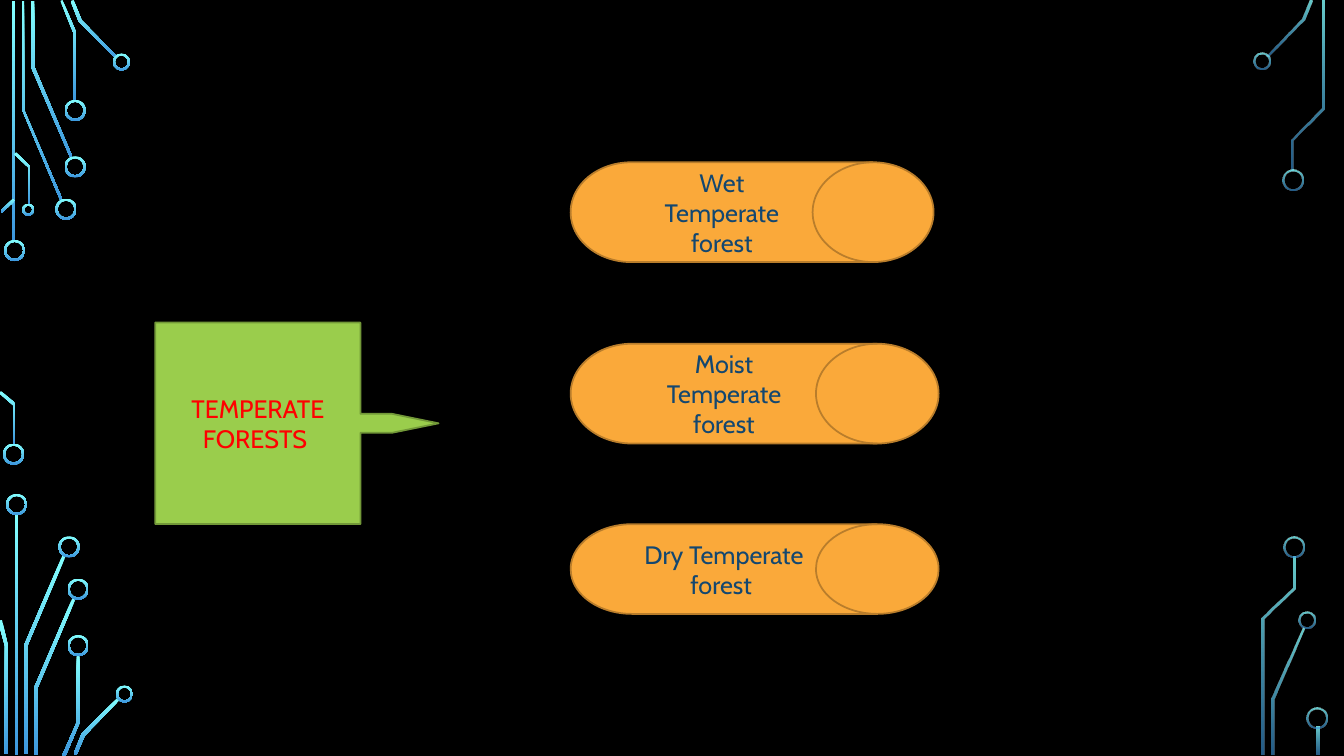
"""Build a slide that sorts temperate forests into three kinds."""
from lxml import etree
from pptx import Presentation
from pptx.dml.color import RGBColor
from pptx.enum.shapes import MSO_SHAPE
from pptx.enum.text import MSO_ANCHOR, PP_ALIGN
from pptx.oxml.ns import qn
from pptx.util import Inches, Pt

RECT = MSO_SHAPE.RECTANGLE
RING = MSO_SHAPE.DONUT
DRUM = MSO_SHAPE.FLOWCHART_DIRECT_ACCESS_STORAGE
CALLOUT = MSO_SHAPE.RIGHT_ARROW_CALLOUT
CENTER = PP_ALIGN.CENTER
MIDDLE = MSO_ANCHOR.MIDDLE


def glow(shape, right):
    """Give a circuit part its gradient, see-through on the right side."""
    shape.shadow.inherit = False
    shape.line.fill.background()
    shape.fill.gradient()
    shape.fill.gradient_angle = 270
    parts = zip(shape.fill.gradient_stops, ("82FFFF", "3D97DE"), (0, 1))
    for stop, color, place in parts:
        stop.color.rgb = RGBColor.from_string(color)
        stop.position = place
    if right:
        tones = shape._element.spPr.iter(qn("a:srgbClr"))
        for tone, alpha in zip(list(tones), ("80000", "60000")):
            etree.SubElement(tone, qn("a:alpha")).set("val", alpha)


def label(shape, box_fill, edge, text, color):
    """Paint a box and write its centred text."""
    shape.shadow.inherit = False
    shape.fill.solid()
    shape.fill.fore_color.rgb = RGBColor.from_string(box_fill)
    shape.line.color.rgb = RGBColor.from_string(edge)
    shape.line.width = Pt(1.25)
    frame = shape.text_frame
    frame.word_wrap = True
    frame.vertical_anchor = MIDDLE
    para = frame.paragraphs[0]
    para.text = text
    para.alignment = CENTER
    para.font.size = Pt(18)
    para.font.name = "Cabin"
    para.font.color.rgb = RGBColor.from_string(color)


deck = Presentation()
deck.slide_width = Inches(13.33)
deck.slide_height = Inches(7.5)
slide = deck.slides.add_slide(deck.slide_layouts[6])
slide.background.fill.solid()
slide.background.fill.fore_color.rgb = RGBColor.from_string("000000")
shapes = slide.shapes

bars = [(0.12, 0.01, 2.39), (0.15, 5.1, 2.39), (13.06, 7.21, 0.28)]
for left, top, high in bars:
    bar = shapes.add_shape(
        RECT, Inches(left), Inches(top), Inches(0.03), Inches(high))
    glow(bar, left > 6)

traces = [
    [(0.6, 1.99), (0.22, 1.09), (0.22, 0.01), (0.24, 0.01), (0.24, 1.09),
     (0.62, 1.98)],
    [(0.7, 1.57), (0.31, 0.67), (0.31, 0.01), (0.34, 0.01), (0.34, 0.66),
     (0.72, 1.56)],
    [(0.76, 1), (0.73, 1), (0.73, 0.33), (0.6, 0.01), (0.62, 0),
     (0.76, 0.33)],
    [(1.15, 0.58), (0.78, 0.21), (0.7, 0.01), (0.73, 0), (0.81, 0.2),
     (1.16, 0.56)],
    [(0.02, 2.11), (0.01, 2.09), (0.13, 1.97), (0.15, 1.99)],
    [(0.15, 4.41), (0.13, 4.41), (0.13, 4.02), (-0.01, 3.9), (0.01, 3.88),
     (0.15, 4)],
    [(0.3, 2.03), (0.28, 2.03), (0.28, 1.66), (0.14, 1.53), (0.16, 1.51),
     (0.3, 1.65)],
    [(0.27, 7.48), (0.24, 7.48), (0.24, 6.4), (0.62, 5.51), (0.65, 5.52),
     (0.27, 6.41)],
    [(0.08, 7.48), (0.05, 7.48), (0.05, 6.41), (-0.02, 6.16), (0.02, 6.15),
     (0.08, 6.41)],
    [(0.37, 7.49), (0.34, 7.49), (0.34, 6.82), (0.72, 5.93), (0.75, 5.94),
     (0.37, 6.83)],
    [(0.65, 7.5), (0.62, 7.49), (0.76, 7.17), (0.76, 6.5), (0.79, 6.5),
     (0.79, 7.17)],
    [(0.76, 7.49), (0.73, 7.48), (0.81, 7.28), (1.17, 6.92), (1.19, 6.94),
     (0.84, 7.3)],
    [(12.58, 0.56), (12.56, 0.55), (12.91, 0.19), (12.99, 0), (13.02, 0.01),
     (12.94, 0.2)],
    [(12.64, 7.49), (12.61, 7.49), (12.61, 6.93), (12.92, 6.23),
     (12.94, 6.24), (12.64, 6.94)],
    [(12.83, 1.69), (12.81, 1.69), (12.81, 1.38), (13.11, 1.07),
     (13.11, 0.01), (13.14, 0.01), (13.14, 1.08), (12.83, 1.39)],
    [(12.54, 7.49), (12.51, 7.49), (12.51, 6.13), (12.82, 5.83),
     (12.82, 5.52), (12.85, 5.52), (12.85, 5.84), (12.54, 6.14)],
]
for trace in traces:
    spots = [(Inches(x), Inches(y)) for x, y in trace]
    pen = shapes.build_freeform(*spots[0])
    pen.add_line_segments(spots[1:])
    glow(pen.convert_to_shape(), trace[0][0] > 6)

rings = {
    0.21: [(0.04, 2.38), (0.03, 4.4), (0.55, 1.97), (0.64, 1.55),
           (0.64, 0.99), (0.06, 4.9), (0.58, 5.32), (0.67, 5.74),
           (0.67, 6.3), (12.72, 1.68), (12.73, 5.32), (12.96, 7.02)],
    0.17: [(1.12, 0.53), (1.15, 6.8), (12.43, 0.52), (12.88, 6.07)],
    0.12: [(0.22, 2.02)],
}
for size, spots in rings.items():
    for left, top in spots:
        ring = shapes.add_shape(
            RING, Inches(left), Inches(top), Inches(size), Inches(size))
        ring.adjustments[0] = 0.02 / size
        glow(ring, left > 6)

root = shapes.add_shape(
    CALLOUT, Inches(1.54), Inches(3.2), Inches(2.81), Inches(2))
for i, value in enumerate((0.094, 0.047, 0.23, 0.724)):
    root.adjustments[i] = value
label(root, "9ACD4C", "729838", "TEMPERATE FORESTS ", "FF0000")

kinds = [
    ("Wet Temperate forest", 1.61, 3.6, 0.99),
    ("Moist Temperate forest", 3.41, 3.65, 0.99),
    ("Dry Temperate forest ", 5.2, 3.65, 0.89),
]
for text, top, wide, high in kinds:
    drum = shapes.add_shape(
        DRUM, Inches(5.66), Inches(top), Inches(wide), Inches(high))
    label(drum, "FAA93A", "B97D2B", text, "134770")

deck.save("out.pptx")
